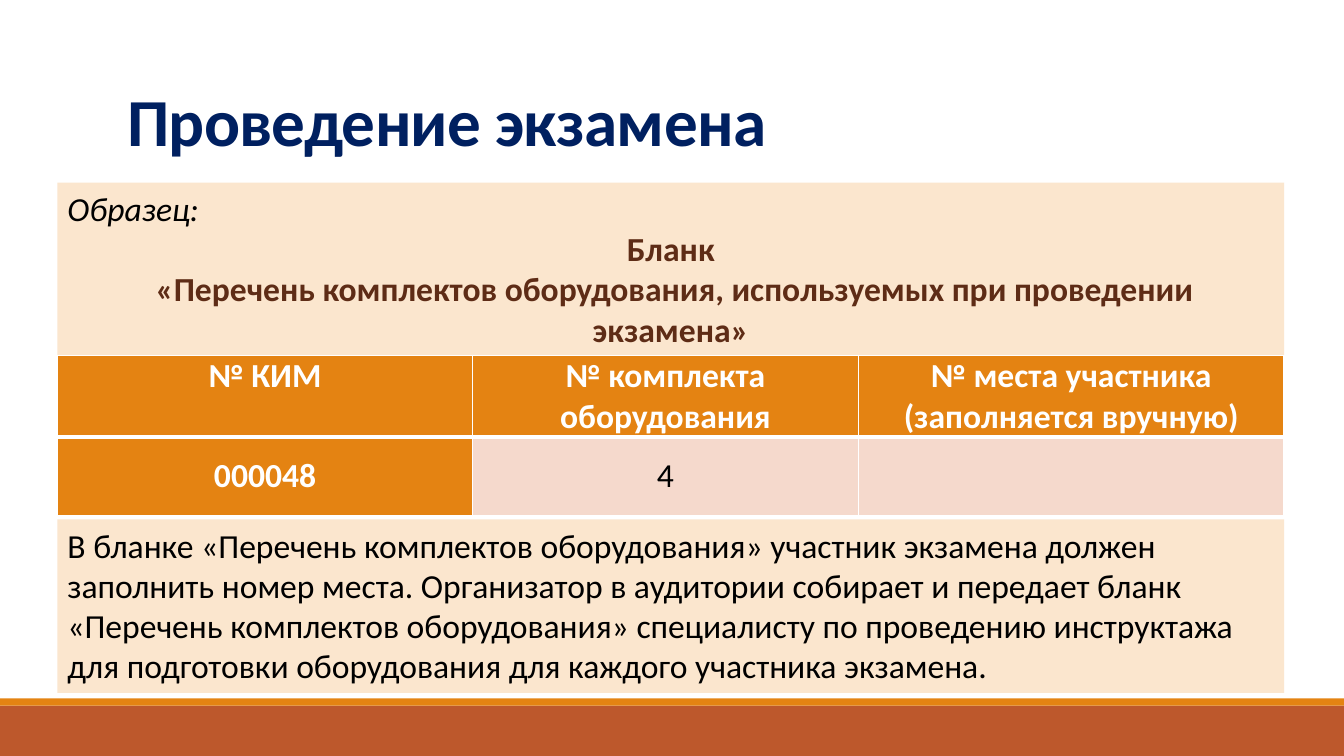
"""Build the exam slide with a sample equipment form."""
from lxml import etree
from pptx import Presentation
from pptx.dml.color import RGBColor
from pptx.enum.shapes import MSO_SHAPE
from pptx.enum.text import MSO_ANCHOR, MSO_AUTO_SIZE, PP_ALIGN
from pptx.oxml.ns import qn
from pptx.util import Cm, Pt

LEFT, CENTER = PP_ALIGN.LEFT, PP_ALIGN.CENTER
TOP, MIDDLE, BOTTOM = MSO_ANCHOR.TOP, MSO_ANCHOR.MIDDLE, MSO_ANCHOR.BOTTOM
RECTANGLE = MSO_SHAPE.RECTANGLE
NO_AUTOFIT = MSO_AUTO_SIZE.NONE

COLORS = {
    "navy": "002060", "black": "000000", "white": "FFFFFF", "brown": "5E2C16",
    "cream": "FBE6CE", "orange": "E48312", "rust": "BD582C", "pink": "F5D9CC",
}
FONT = "Calibri"
TEXT_SIZE = 24

TITLE = "Проведение экзамена"
SAMPLE = [
    ("Образец:", LEFT, "black", False, True),
    ("Бланк", CENTER, "brown", True, False),
    (" «Перечень комплектов оборудования, используемых при проведении экзамена»",
     CENTER, "brown", True, False),
]
FORM = [
    ["№ КИМ", "№ комплекта оборудования", "№ места участника (заполняется вручную)"],
    ["000048", "4", ""],
]
INSTRUCTION = [
    ("В бланке «Перечень комплектов оборудования» участник экзамена должен "
     "заполнить номер места. Организатор в аудитории собирает и передает бланк "
     "«Перечень комплектов оборудования» специалисту по проведению инструктажа "
     "для подготовки оборудования для каждого участника экзамена.",
     LEFT, "black", False, False),
]

SLIDE_W, SLIDE_H = 33.87, 19.05
BLOCK_LEFT, BLOCK_W, PANEL_H = 1.45, 30.91, 4.37
SAMPLE_TOP, FORM_TOP, INSTRUCTION_TOP = 4.6, 8.95, 13.09
COLUMN_WIDTHS = [10.46, 9.72, 10.73]
ROW_HEIGHTS = [2.01, 1.98]
FOOTER_H, STRIPE_H = 1.27, 0.18


def rgb(color):
    return RGBColor.from_string(COLORS[color])


def write(paragraph, text, align, color, bold=False, italic=False, size=TEXT_SIZE):
    paragraph.text = text
    paragraph.alignment = align
    for run in paragraph.runs:
        font = run.font
        font.name, font.size = FONT, Pt(size)
        font.bold, font.italic = bold, italic
        font.color.rgb = rgb(color)


def add_block(slide, left, top, width, height, color):
    block = slide.shapes.add_shape(RECTANGLE, Cm(left), Cm(top), Cm(width), Cm(height))
    block.shadow.inherit = False
    block.fill.solid()
    block.fill.fore_color.rgb = rgb(color)
    block.line.fill.background()
    return block


def add_panel(slide, top, lines):
    frame = add_block(slide, BLOCK_LEFT, top, BLOCK_W, PANEL_H, "cream").text_frame
    frame.word_wrap = True
    frame.vertical_anchor = TOP
    frame.text = "\n".join(line[0] for line in lines)
    for paragraph, line in zip(frame.paragraphs, lines):
        write(paragraph, *line)


def set_borders(cell, widths):
    properties = cell._tc.get_or_add_tcPr()
    for position, (side, width) in enumerate(widths.items()):
        border = etree.Element(qn(f"a:{side}"), w=str(Pt(width)))
        fill = etree.SubElement(border, qn("a:solidFill"))
        etree.SubElement(fill, qn("a:srgbClr"), val=COLORS["white"])
        properties.insert(position, border)


def add_form(slide):
    table = slide.shapes.add_table(
        len(FORM), len(COLUMN_WIDTHS), Cm(BLOCK_LEFT), Cm(FORM_TOP),
        Cm(BLOCK_W), Cm(sum(ROW_HEIGHTS))).table
    table.horz_banding = False
    for column, width in zip(table.columns, COLUMN_WIDTHS):
        column.width = Cm(width)
    for row, height in zip(table.rows, ROW_HEIGHTS):
        row.height = Cm(height)
    for r, values in enumerate(FORM):
        for c, value in enumerate(values):
            cell = table.cell(r, c)
            heading = r == 0 or c == 0
            cell.fill.solid()
            cell.fill.fore_color.rgb = rgb("orange" if heading else "pink")
            cell.margin_left = cell.margin_right = Cm(0.18)
            cell.margin_top = cell.margin_bottom = 0
            cell.vertical_anchor = TOP if r == 0 else MIDDLE
            write(cell.text_frame.paragraphs[0], value, CENTER,
                  "white" if heading else "black", heading)
            set_borders(cell, {"lnL": 1, "lnR": 1, "lnT": 3 if r else 1,
                               "lnB": 1 if r else 3})


def add_title(slide):
    title = slide.shapes.title
    title.left, title.top = Cm(2.95), Cm(1.57)
    title.width, title.height = Cm(27.94), Cm(2.59)
    frame = title.text_frame
    frame.auto_size = NO_AUTOFIT
    frame.word_wrap = True
    frame.vertical_anchor = BOTTOM
    heading = frame.paragraphs[0]
    write(heading, TITLE, LEFT, "navy", bold=True, size=48)
    heading.line_spacing = 0.85
    heading.runs[0].font._element.set("spc", "-50")


def main():
    deck = Presentation()
    deck.slide_width, deck.slide_height = Cm(SLIDE_W), Cm(SLIDE_H)
    slide = deck.slides.add_slide(deck.slide_layouts[5])
    footer_top = SLIDE_H - FOOTER_H
    add_block(slide, 0, footer_top, SLIDE_W, FOOTER_H, "rust")
    add_block(slide, 0, footer_top - STRIPE_H, SLIDE_W, STRIPE_H, "orange")
    add_title(slide)
    add_panel(slide, SAMPLE_TOP, SAMPLE)
    add_form(slide)
    add_panel(slide, INSTRUCTION_TOP, INSTRUCTION)
    deck.save("out.pptx")


if __name__ == "__main__":
    main()
